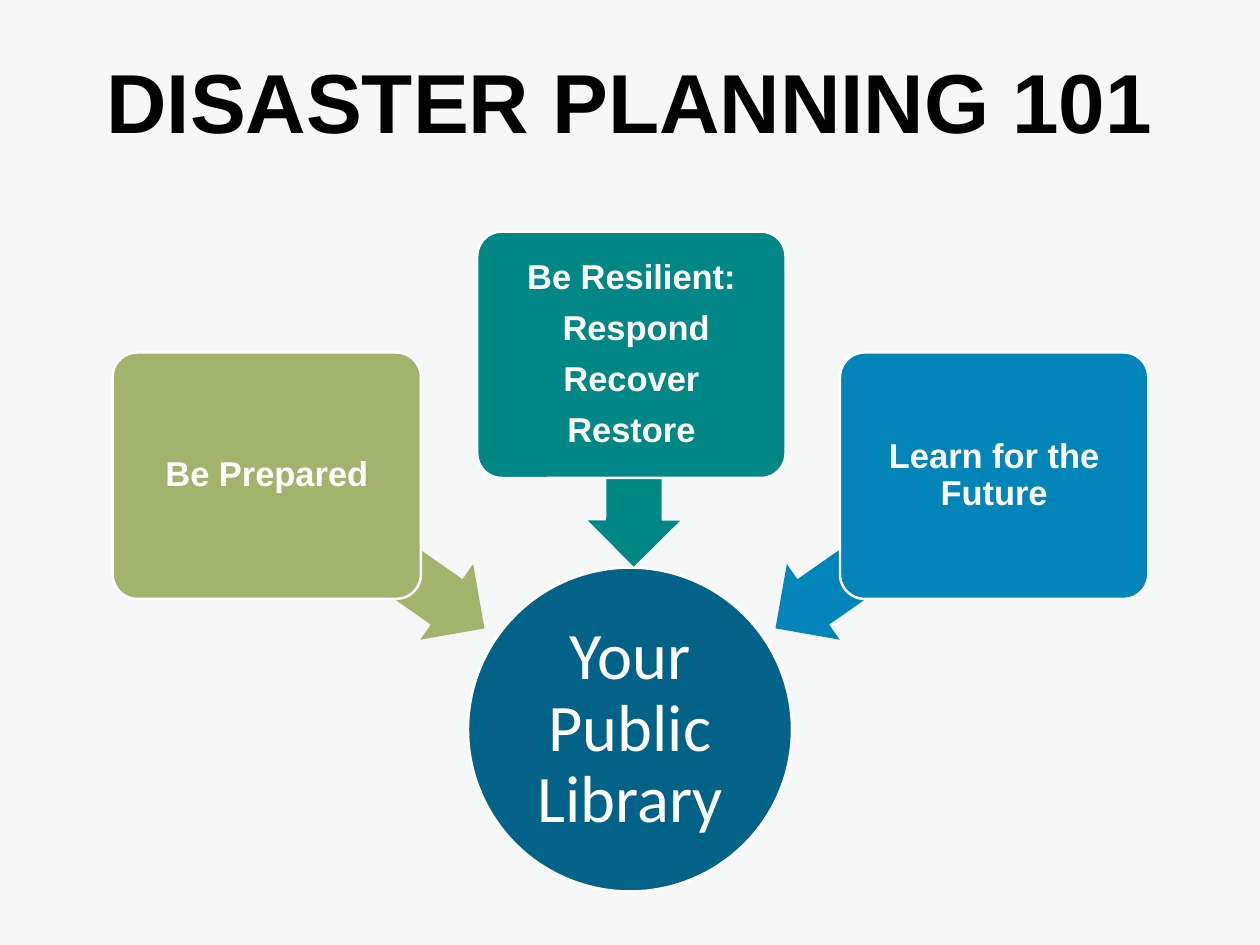
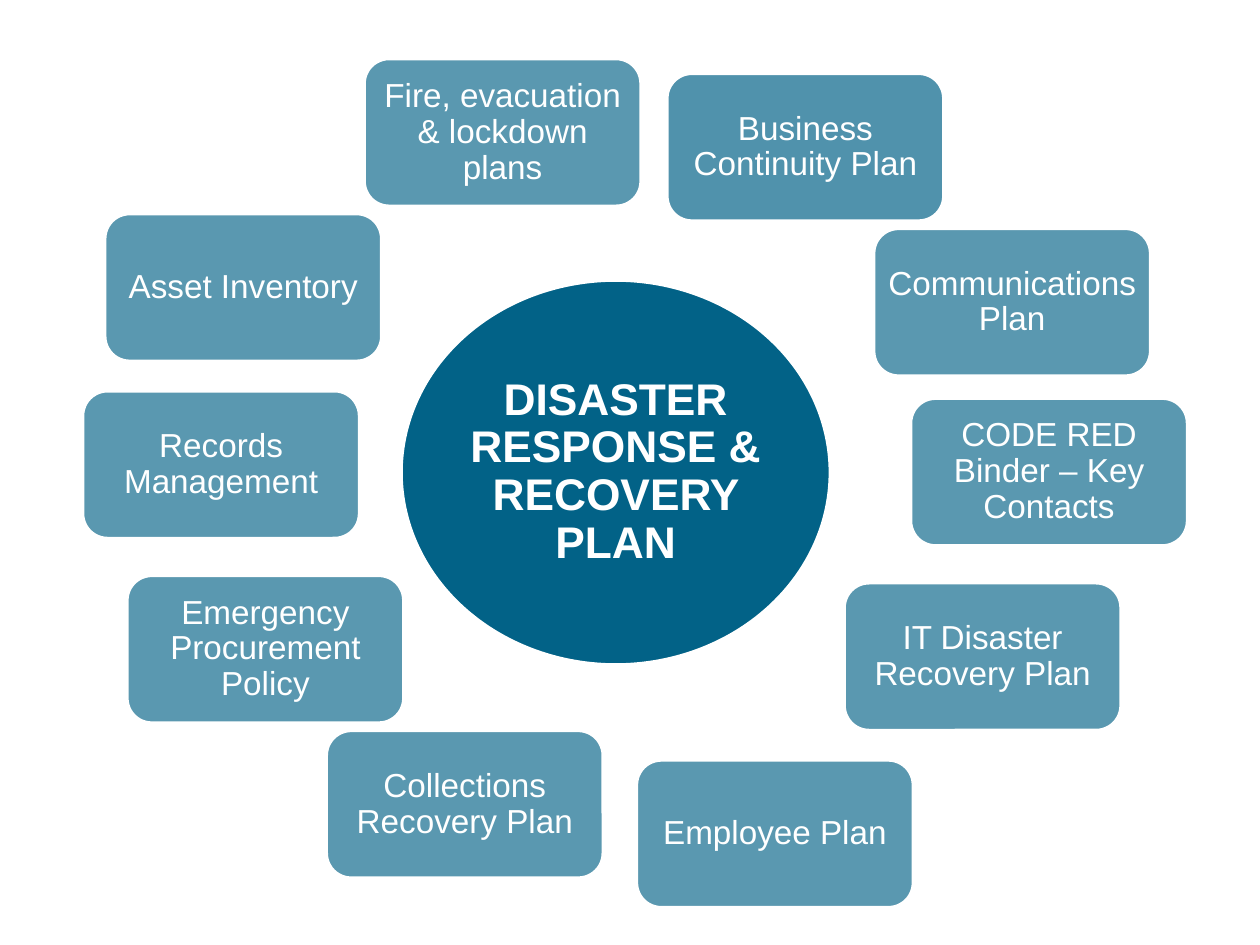
from dataclasses import dataclass
from typing import Optional

from lxml.etree import SubElement
from pptx import Presentation
from pptx.dml.color import RGBColor
from pptx.enum.shapes import MSO_SHAPE as Preset
from pptx.enum.text import MSO_ANCHOR as Anchor, PP_ALIGN as Align
from pptx.oxml.ns import qn
from pptx.util import Emu, Pt

EMU_PER_PX = 9525
SLIDE_W, SLIDE_H = 1365, 1024


@dataclass(frozen=True)
class Theme:
    paper: str = "F6F7F7"
    ink: str = "000000"
    white: str = "FFFFFF"
    navy: str = "026287"
    green: str = "A0B56B"
    teal: str = "028787"
    blue: str = "0385B9"
    title_size: int = 68
    hub_size: int = 54
    plan_hub_size: int = 36
    stage_size: int = 28
    plan_size: int = 27
    outline: int = 2
    line_spacing: float = 0.9
    paragraph_gap: float = 0.38


THEME = Theme()


@dataclass(frozen=True)
class Box:
    left: int
    top: int
    width: int
    height: int

    def emu(self) -> list[Emu]:
        return [px(n) for n in (self.left, self.top, self.width, self.height)]


@dataclass(frozen=True)
class Lettering:
    size: int
    color: str = THEME.white
    bold: bool = False
    font: str = "Arial"
    inset: int = 4


@dataclass(frozen=True)
class Stage:
    lines: tuple[str, ...]
    color: str
    card: Box
    arrow: Box
    rotation: float


@dataclass(frozen=True)
class Plan:
    label: str
    left: int
    top: int
    opacity: int = 65


def px(length: int) -> Emu:
    return Emu(length * EMU_PER_PX)


def rgb(color: str) -> RGBColor:
    return RGBColor.from_string(color)


def write(shape, lines: tuple[str, ...], style: Lettering) -> None:
    """Fill a shape with centred paragraphs."""
    frame = shape.text_frame
    frame_format = {
        "word_wrap": True,
        "vertical_anchor": Anchor.MIDDLE,
        **{f"margin_{side}": px(style.inset)
           for side in ("left", "top", "right", "bottom")},
    }
    for name, value in frame_format.items():
        setattr(frame, name, value)

    paragraph_format = {
        "alignment": Align.CENTER,
        "line_spacing": THEME.line_spacing,
        "space_after": Pt(round(style.size * THEME.paragraph_gap)),
    }
    font_format = {"name": style.font, "size": Pt(style.size), "bold": style.bold}
    for index, line in enumerate(lines):
        paragraph = frame.add_paragraph() if index else frame.paragraphs[0]
        for name, value in paragraph_format.items():
            setattr(paragraph, name, value)
        run = paragraph.add_run()
        run.text = line
        for name, value in font_format.items():
            setattr(run.font, name, value)
        run.font.color.rgb = rgb(style.color)


def draw(slide, preset: Preset, box: Box, color: str,
         outlined: bool = True, opacity: Optional[int] = None):
    """Add a filled preset shape, with a white outline where wanted."""
    shape = slide.shapes.add_shape(preset, *box.emu())
    shape.shadow.inherit = False
    shape.fill.solid()
    shape.fill.fore_color.rgb = rgb(color)
    if opacity is not None:
        fill_color = shape.element.spPr.find(f"{qn('a:solidFill')}/{qn('a:srgbClr')}")
        SubElement(fill_color, qn("a:alpha"), val=str(opacity * 1000))
    if outlined:
        shape.line.color.rgb = rgb(THEME.white)
        shape.line.width = Pt(THEME.outline)
    else:
        shape.line.fill.background()
    return shape


def add_title(slide, text: str) -> None:
    title = slide.shapes.add_textbox(*Box(0, 54, SLIDE_W, 108).emu())
    write(title, (text,), Lettering(THEME.title_size, THEME.ink, bold=True, inset=0))
    title.text_frame.paragraphs[0].line_spacing = 1.0


def add_hub(slide, box: Box, text: str, style: Lettering) -> None:
    write(draw(slide, Preset.OVAL, box, THEME.navy), (text,), style)


def add_stage(slide, stage: Stage) -> None:
    """Draw a card with the arrow that leads from it to the hub."""
    arrow = draw(slide, Preset.LEFT_ARROW, stage.arrow, stage.color, outlined=False)
    arrow.adjustments[0], arrow.adjustments[1] = 0.6, 0.5
    arrow.rotation = stage.rotation
    card = draw(slide, Preset.ROUNDED_RECTANGLE, stage.card, stage.color)
    card.adjustments[0] = 0.1
    write(card, stage.lines, Lettering(THEME.stage_size, bold=True, inset=6))


def add_plan(slide, plan: Plan) -> None:
    card = draw(slide, Preset.FLOWCHART_ALTERNATE_PROCESS,
                Box(plan.left, plan.top, 299, 159), THEME.navy, opacity=plan.opacity)
    write(card, (plan.label,), Lettering(THEME.plan_size))


CARD_SIZE = (334, 267)
SIDE_ARROW_SIZE = (289, 100)
STAGES = (
    Stage(("Be Prepared",), THEME.green,
          Box(122, 382, *CARD_SIZE), Box(262, 548, *SIDE_ARROW_SIZE), 215),
    Stage(("Be Resilient:", " Respond", "Recover", "Restore"), THEME.teal,
          Box(517, 251, *CARD_SIZE), Box(578, 455, 218, 100), 270.2),
    Stage(("Learn for the Future",), THEME.blue,
          Box(910, 382, *CARD_SIZE), Box(814, 548, *SIDE_ARROW_SIZE), 325),
)

# Clockwise from the top right
PLANS = (
    Plan("Business Continuity Plan", 723, 80, opacity=69),
    Plan("Communications Plan", 947, 248),
    Plan("CODE RED Binder – Key Contacts", 987, 432),
    Plan("IT Disaster Recovery Plan", 915, 632),
    Plan("Employee Plan", 690, 824),
    Plan("Collections Recovery Plan", 354, 792),
    Plan("Emergency Procurement Policy", 138, 624),
    Plan("Records Management", 90, 424),
    Plan("Asset Inventory", 114, 232),
    Plan("Fire, evacuation & lockdown plans", 395, 64),
)


def main() -> None:
    deck = Presentation()
    deck.slide_width, deck.slide_height = px(SLIDE_W), px(SLIDE_H)
    blank = deck.slide_layouts[6]

    # Three stages around the library
    overview = deck.slides.add_slide(blank)
    overview.background.fill.solid()
    overview.background.fill.fore_color.rgb = rgb(THEME.paper)
    add_title(overview, "DISASTER PLANNING 101")
    add_hub(overview, Box(507, 615, 351, 351), "Your Public Library",
            Lettering(THEME.hub_size, font="Calibri"))
    for stage in STAGES:
        add_stage(overview, stage)

    # Ring of plans around the response plan
    plan_ring = deck.slides.add_slide(blank)
    add_hub(plan_ring, Box(435, 304, 464, 416), "DISASTER RESPONSE & RECOVERY PLAN",
            Lettering(THEME.plan_hub_size, bold=True, inset=5))
    for plan in PLANS:
        add_plan(plan_ring, plan)

    deck.save("out.pptx")


if __name__ == "__main__":
    main()
